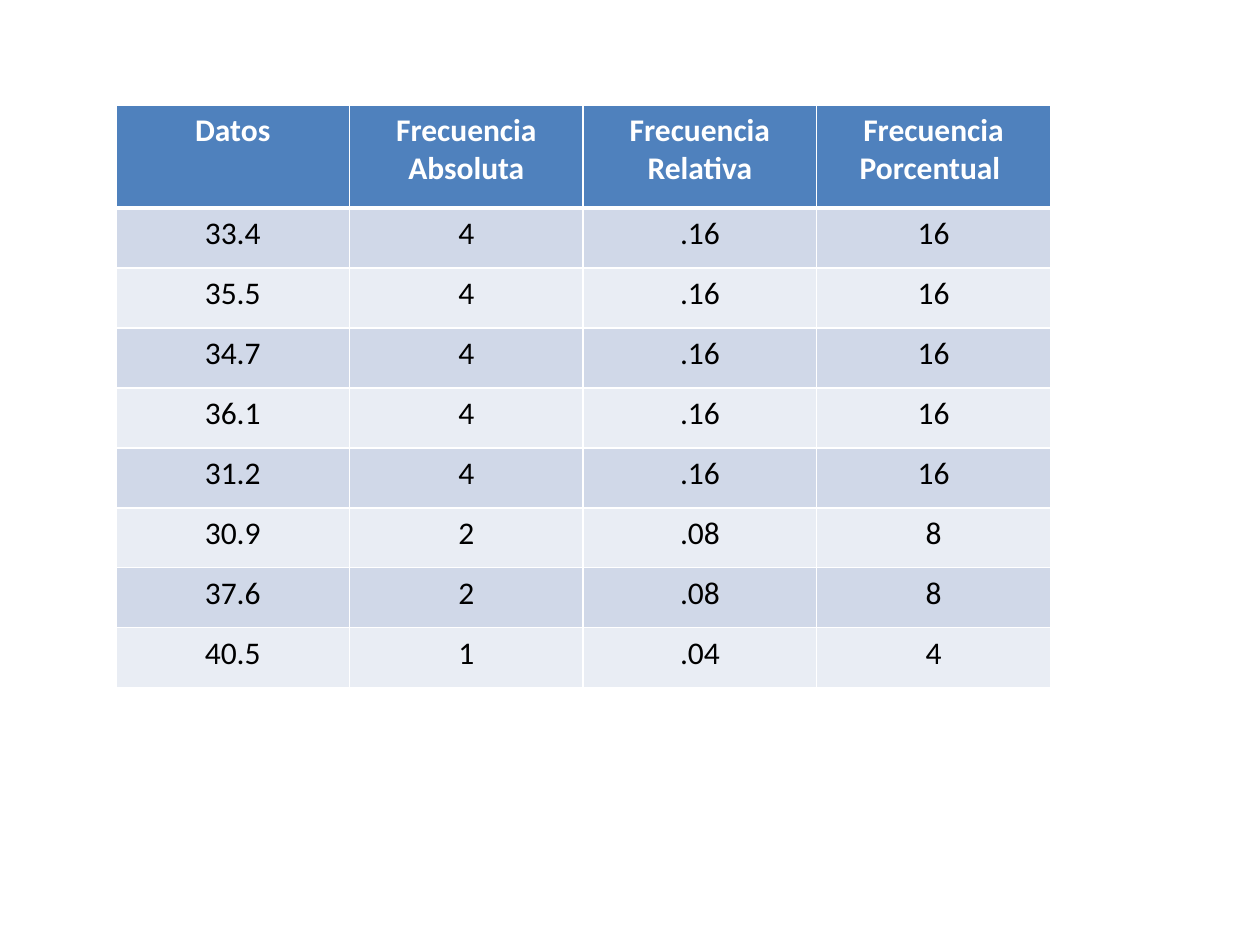
from dataclasses import dataclass

from lxml import etree
from pptx import Presentation
from pptx.dml.color import RGBColor
from pptx.enum.text import PP_ALIGN
from pptx.oxml.ns import qn
from pptx.util import Inches, Pt

CENTER = PP_ALIGN.CENTER
WIDE, HIGH = Inches(10), Inches(7.5)
LEFT, TOP = 0.092, 0.111
COL, HEAD, ROW = 0.1854, 0.109, 0.0635


@dataclass(frozen=True)
class Theme:
    font: str = "Calibri"
    size: int = 18
    head: str = "4F81BD"
    bands: tuple = ("D0D8E8", "E9EDF4")
    light: str = "FFFFFF"
    dark: str = "000000"
    thin: int = 1
    thick: int = 3


THEME = Theme()
TITLES = ("Datos", "Frecuencia Absoluta", "Frecuencia Relativa",
          "Frecuencia Porcentual ")
DATA = (
    ("33.4", "4", ".16", "16"),
    ("35.5", "4", ".16", "16"),
    ("34.7", "4", ".16", "16"),
    ("36.1", "4", ".16", "16"),
    ("31.2", "4", ".16", "16"),
    ("30.9", "2", ".08", "8"),
    ("37.6", "2", ".08", "8"),
    ("40.5", "1", ".04", "4"),
)


def add_edge(cell, side, width):
    props = cell._tc.get_or_add_tcPr()
    line = etree.SubElement(props, qn(f"a:ln{side}"), w=str(Pt(width)))
    fill = etree.SubElement(line, qn("a:solidFill"))
    etree.SubElement(fill, qn("a:srgbClr"), val=THEME.light)


def fill_cell(cell, text, row):
    head = row == 0
    thick = {0: "B", 1: "T"}.get(row)
    for side in "LRTB":
        add_edge(cell, side, THEME.thick if side == thick else THEME.thin)
    color = THEME.head if head else THEME.bands[(row - 1) % 2]
    cell.fill.solid()
    cell.fill.fore_color.rgb = RGBColor.from_string(color)
    cell.text_frame.text = text
    para = cell.text_frame.paragraphs[0]
    para.alignment = CENTER
    font = para.runs[0].font
    font.name, font.size, font.bold = THEME.font, Pt(THEME.size), head
    font.color.rgb = RGBColor.from_string(THEME.light if head else THEME.dark)


def add_grid(slide, rows):
    count = len(rows[0])
    tall = HEAD + ROW * (len(rows) - 1)
    table = slide.shapes.add_table(
        len(rows), count, int(WIDE * LEFT), int(HIGH * TOP),
        int(WIDE * COL * count), int(HIGH * tall)).table
    for col in table.columns:
        col.width = int(WIDE * COL)
    for r, texts in enumerate(rows):
        table.rows[r].height = int(HIGH * (ROW if r else HEAD))
        for c, text in enumerate(texts):
            fill_cell(table.cell(r, c), text, r)


def main():
    deck = Presentation()
    deck.slide_width, deck.slide_height = WIDE, HIGH
    slide = deck.slides.add_slide(deck.slide_layouts[6])
    add_grid(slide, (TITLES, *DATA))
    deck.save("out.pptx")


if __name__ == "__main__":
    main()
